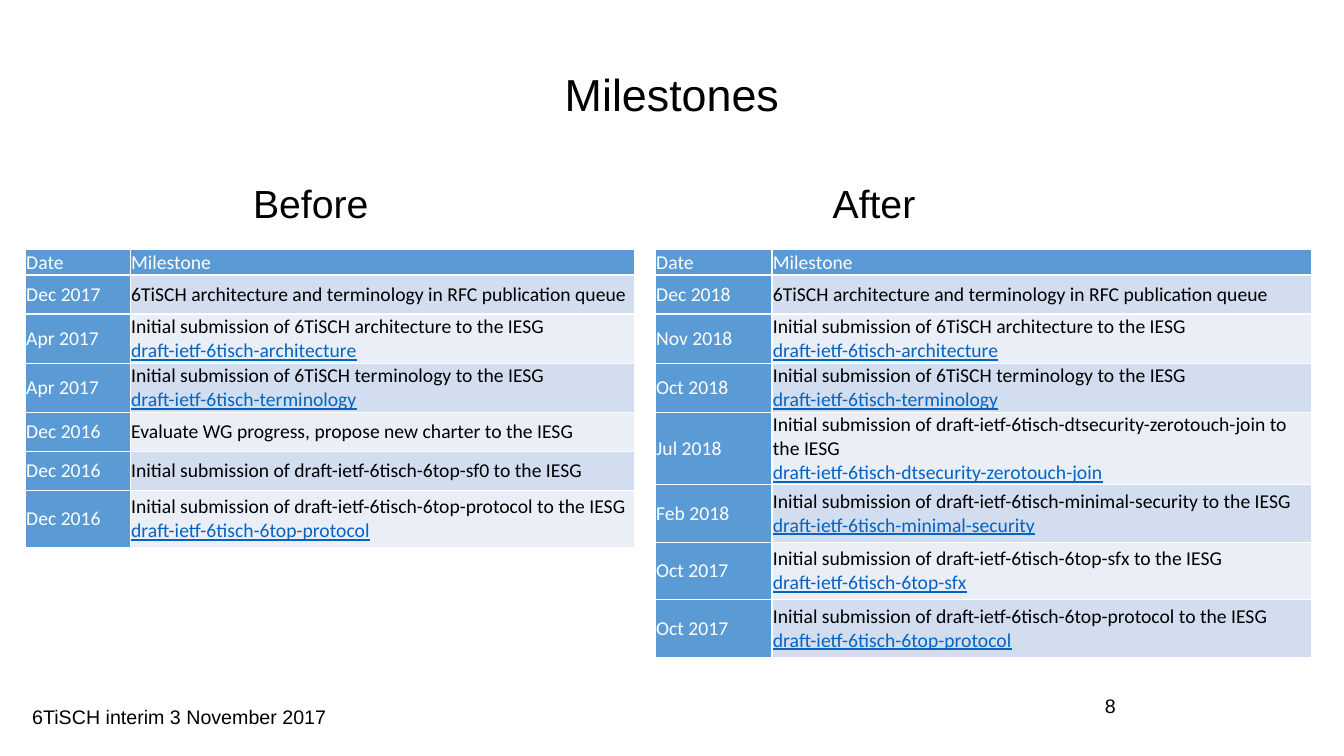
import copy

import pptx
import pptx.dml.color
import pptx.enum.text
import pptx.oxml
import pptx.oxml.ns
import pptx.util
from dataclasses import dataclass

ALIGN = pptx.enum.text.PP_ALIGN
ANCHOR = pptx.enum.text.MSO_ANCHOR


@dataclass
class Theme:
    text: str = "000000"
    light: str = "FFFFFF"
    accent: str = "5B9BD5"
    bands: tuple = ("D2DEEF", "EAEFF7")
    link: str = "0563C1"
    heading_font: str = "Arial"
    table_font: str = "Calibri"
    title: int = 32
    subtitle: int = 28
    body: int = 14


class Deck:
    """Draws styled elements on one slide, measured on a 160 by 90 grid."""

    def __init__(self, prs, theme):
        self.theme = theme
        self.unit = prs.slide_width / 160
        self.s = prs.slides.add_slide(prs.slide_layouts[6])

    def grid(self, *cells):
        return [round(c * self.unit) for c in cells]

    def style(self, r, size, color, font):
        r.font.size = pptx.util.Pt(size)
        r.font.name = font
        r.font.color.rgb = pptx.dml.color.RGBColor.from_string(color)

    def text(self, box, text, size, align=ALIGN.LEFT, anchor=ANCHOR.TOP):
        tf = self.s.shapes.add_textbox(*self.grid(*box)).text_frame
        tf.word_wrap = True
        tf.vertical_anchor = anchor
        tf.text = text
        p = tf.paragraphs[0]
        p.alignment = align
        self.style(p.runs[0], size, self.theme.text, self.theme.heading_font)

    def borders(self, cell):
        tcPr = cell._tc.get_or_add_tcPr()
        for i, side in enumerate(("lnL", "lnR", "lnT", "lnB")):
            tcPr.insert(i, pptx.oxml.parse_xml(
                f'<a:{side} {pptx.oxml.ns.nsdecls("a")} w="12700"><a:solidFill>'
                f'<a:srgbClr val="{self.theme.light}"/></a:solidFill></a:{side}>'))

    def cell(self, cell, text, fill, color):
        cell.margin_left = cell.margin_right = pptx.util.Inches(0.01)
        cell.margin_top = cell.margin_bottom = pptx.util.Inches(0.01)
        cell.vertical_anchor = ANCHOR.MIDDLE
        cell.fill.solid()
        cell.fill.fore_color.rgb = pptx.dml.color.RGBColor.from_string(fill)
        self.borders(cell)
        cell.text_frame.text = text
        for p in cell.text_frame.paragraphs:
            for r in p.runs:
                is_link = r.text.startswith("draft-")
                self.style(r, self.theme.body, self.theme.link if is_link else color,
                           self.theme.table_font)
                if is_link:
                    r.font.underline = True
            for br in p._p.findall(pptx.oxml.ns.qn("a:br")):
                br.insert(0, copy.deepcopy(p.runs[0]._r.rPr))

    def table(self, left, top, widths, heights, rows):
        x, y, w, h = self.grid(left, top, sum(widths), sum(heights))
        t = self.s.shapes.add_table(len(rows), len(widths), x, y, w, h).table
        for col, width in zip(t.columns, self.grid(*widths)):
            col.width = width
        for row, height in zip(t.rows, self.grid(*heights)):
            row.height = height
        th = self.theme
        for i, (date, milestone) in enumerate(rows):
            self.cell(t.cell(i, 0), date, th.accent, th.light)
            fill, color = (th.bands[(i - 1) % 2], th.text) if i else (th.accent, th.light)
            self.cell(t.cell(i, 1), milestone, fill, color)


HEADER = ("Date", "Milestone")
QUEUE = "6TiSCH architecture and terminology in RFC publication queue"
ARCHITECTURE = "Initial submission of 6TiSCH architecture to the IESG\vdraft-ietf-6tisch-architecture"
TERMINOLOGY = "Initial submission of 6TiSCH terminology to the IESG\vdraft-ietf-6tisch-terminology"


def submission(draft, separator="\v"):
    return f"Initial submission of {draft} to the IESG{separator}{draft}"


PROTOCOL = submission("draft-ietf-6tisch-6top-protocol")
BEFORE = [
    HEADER,
    ("Dec 2017", QUEUE),
    ("Apr 2017", ARCHITECTURE),
    ("Apr 2017", TERMINOLOGY),
    ("Dec 2016", "Evaluate WG progress, propose new charter to the IESG"),
    ("Dec 2016", "Initial submission of draft-ietf-6tisch-6top-sf0 to the IESG"),
    ("Dec 2016", PROTOCOL),
]
AFTER = [
    HEADER,
    ("Dec 2018", QUEUE),
    ("Nov 2018", ARCHITECTURE),
    ("Oct 2018", TERMINOLOGY),
    ("Jul 2018", submission("draft-ietf-6tisch-dtsecurity-zerotouch-join")),
    ("Feb 2018", submission("draft-ietf-6tisch-minimal-security")),
    ("Oct 2017", submission("draft-ietf-6tisch-6top-sfx", "\n")),
    ("Oct 2017", PROTOCOL),
]
HEAD_ROW, ROW, TALL_ROW = 2.4, 4.65, 6.85


def main():
    prs = pptx.Presentation()
    prs.slide_width = pptx.util.Inches(13.33)
    prs.slide_height = pptx.util.Inches(7.5)
    th = Theme()
    deck = Deck(prs, th)
    deck.text((2.65, 83.4, 40, 4.1), "6TiSCH interim 3 November 2017", th.body)
    deck.text((106, 82, 28, 6.2), "8", th.body, ALIGN.RIGHT)
    deck.text((26, 3.6, 108, 15), "Milestones", th.title, ALIGN.CENTER, ANCHOR.MIDDLE)
    deck.text((28.95, 20.8, 27.4, 8.5), "Before", th.subtitle)
    deck.text((97.95, 20.8, 29.3, 8.5), "After", th.subtitle)
    deck.table(3, 29.7, (12.5, 60), [HEAD_ROW] + [ROW] * 5 + [TALL_ROW], BEFORE)
    deck.table(78, 29.7, (13.9, 64.2), [HEAD_ROW] + [ROW] * 3 + [TALL_ROW] * 4, AFTER)
    prs.save("out.pptx")


if __name__ == "__main__":
    main()
